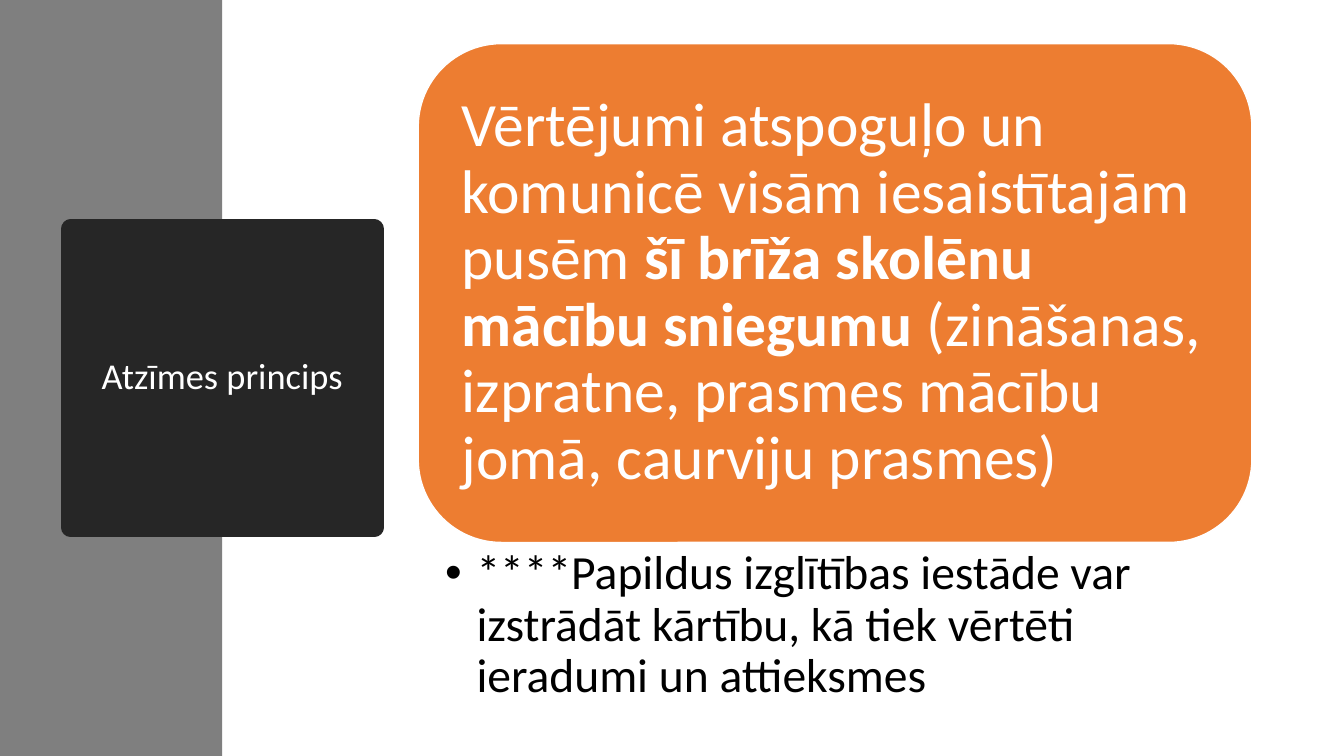
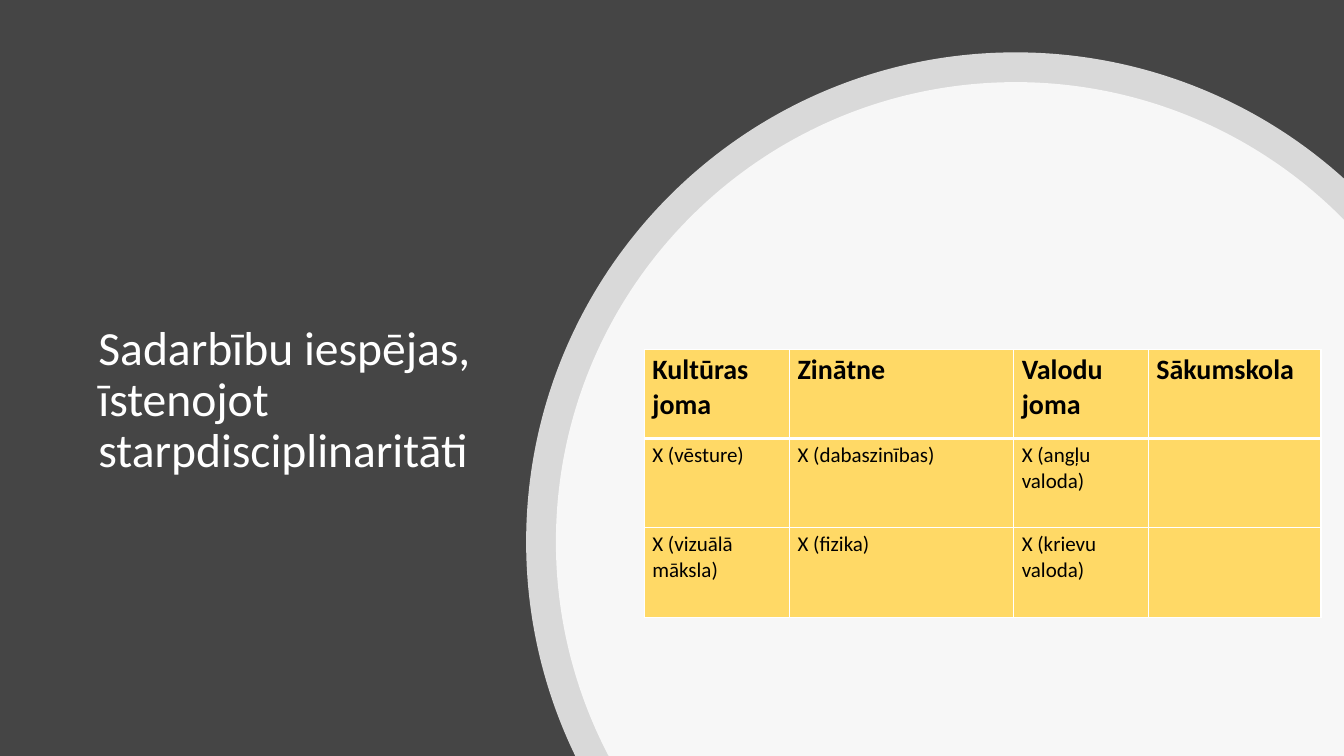
import math
from dataclasses import dataclass

import lxml.etree
import pptx
import pptx.util
import pptx.oxml.ns
import pptx.dml.color
import pptx.enum.shapes
import pptx.enum.text

Cm = pptx.util.Cm
Pt = pptx.util.Pt
Shape = pptx.enum.shapes.MSO_SHAPE
Align = pptx.enum.text.PP_ALIGN
Anchor = pptx.enum.text.MSO_ANCHOR
qn = pptx.oxml.ns.qn


@dataclass(frozen=True)
class Theme:
    font: str = "Calibri"
    white: str = "FFFFFF"
    black: str = "000000"
    band: str = "7F7F7F"
    label: str = "262626"
    card: str = "ED7D31"
    dark: str = "454545"
    cell: str = "FFD966"
    label_size: float = 26
    card_size: float = 44
    large_size: float = 34
    header_size: float = 20
    cell_size: float = 15
    tight: float = 0.9


THEME = Theme()
WIDTH, HEIGHT = 33.87, 19.05

PRINCIPLE = {
    "title": "Atzīmes princips",
    "card": [
        ("Vērtējumi atspoguļo un komunicē visām iesaistītajām pusēm ", False),
        ("šī brīža skolēnu mācību sniegumu ", True),
        ("(zināšanas, izpratne, prasmes mācību jomā, caurviju prasmes)", False),
    ],
    "note": "****Papildus izglītības iestāde var izstrādāt kārtību, "
            "kā tiek vērtēti ieradumi un attieksmes",
}
COOPERATION = {
    "title": "Sadarbību iespējas, īstenojot starpdisciplinaritāti",
    "rows": [
        ("Kultūras joma", "Zinātne", "Valodu joma", "Sākumskola"),
        ("X (vēsture)", "X (dabaszinības)", "X (angļu valoda)", ""),
        ("X (vizuālā māksla)", "X (fizika)", "X (krievu valoda)", ""),
    ],
    "columns": (3.66, 5.65, 3.39, 4.35),
    "row_height": 2.25,
    "centre": (25.6, 13.66),
    "radii": (12.34, 11.59),
}


def rgb(value):
    return pptx.dml.color.RGBColor.from_string(value)


def box_at(left, top, width, height):
    return [Cm(value) for value in (left, top, width, height)]


def paint(shape, fill, line=None, line_width=1):
    shape.fill.solid()
    shape.fill.fore_color.rgb = rgb(fill)
    if line:
        shape.line.color.rgb = rgb(line)
        shape.line.width = Pt(line_width)
    else:
        shape.line.fill.background()


def write(box, text, *, size, color=THEME.white, bold=False, align=Align.LEFT,
          anchor=Anchor.MIDDLE, insets=(0.25, 0.13, 0.25, 0.13),
          spacing=THEME.tight, bullet_indent=None):
    frame = box.text_frame
    holder = box
    if not hasattr(box, "margin_left"):
        holder = frame
        frame.word_wrap = True
        frame.auto_size = pptx.enum.text.MSO_AUTO_SIZE.NONE
    holder.vertical_anchor = anchor
    (holder.margin_left, holder.margin_top,
     holder.margin_right, holder.margin_bottom) = box_at(*insets)
    para = frame.paragraphs[0]
    para.alignment = align
    para.line_spacing = spacing
    for words, strong in [(text, bold)] if isinstance(text, str) else text:
        span = para.add_run()
        span.text = words
        span.font.name = THEME.font
        span.font.size = Pt(size)
        span.font.bold = strong
        span.font.color.rgb = rgb(color)
    if bullet_indent:
        props = para._p.get_or_add_pPr()
        props.set("marL", str(Cm(bullet_indent)))
        props.set("indent", str(-Cm(bullet_indent)))
        lxml.etree.SubElement(props, qn("a:buFont")).set("typeface", "Arial")
        lxml.etree.SubElement(props, qn("a:buChar")).set("char", "•")


def new_page(deck, background, title, place, **style):
    page = deck.slides.add_slide(deck.slide_layouts[5])
    page.background.fill.solid()
    page.background.fill.fore_color.rgb = rgb(background)
    heading = page.shapes.title
    heading.left, heading.top, heading.width, heading.height = box_at(*place)
    write(heading, title, **style)
    return page


def add_block(page, kind, place, fill, line=None):
    shape = page.shapes.add_shape(kind, *box_at(*place))
    shape.shadow.inherit = False
    paint(shape, fill, line)
    return shape


def add_disc(page, centre, radius):
    x, y = centre

    def on_circle(angle, pull=0):
        return (Cm(x + radius * (math.cos(angle) - pull * math.sin(angle))),
                Cm(y + radius * (math.sin(angle) + pull * math.cos(angle))))

    angles = [math.pi - math.asin((HEIGHT - y) / radius), math.pi, 1.5 * math.pi,
              2 * math.pi - math.acos((WIDTH - x) / radius)]
    points = [on_circle(angle) for angle in angles]
    builder = page.shapes.build_freeform(*points[0], scale=1.0)
    builder.add_line_segments(points[1:] + [(Cm(WIDTH), Cm(HEIGHT))], close=True)
    disc = builder.convert_to_shape()
    disc.shadow.inherit = False
    paint(disc, THEME.white)
    color = disc.element.spPr.find(qn("a:solidFill"))[0]
    lxml.etree.SubElement(color, qn("a:alpha")).set("val", "80000")

    lines = list(disc.element.iter(qn("a:lnTo")))
    for line, start, end in zip(lines, angles, angles[1:]):
        pull = 4 / 3 * math.tan((end - start) / 4)
        curve = lxml.etree.Element(qn("a:cubicBezTo"))
        for across, down in (on_circle(start, pull), on_circle(end, -pull), on_circle(end)):
            point = lxml.etree.SubElement(curve, qn("a:pt"))
            point.set("x", str(across - disc.left))
            point.set("y", str(down - disc.top))
        line.getparent().replace(line, curve)


def set_borders(cell, bottom_width):
    props = cell._tc.get_or_add_tcPr()
    widths = {"a:lnL": 1, "a:lnR": 1, "a:lnT": 1, "a:lnB": bottom_width}
    for position, (side, width) in enumerate(widths.items()):
        line = lxml.etree.Element(qn(side))
        line.set("w", str(Pt(width)))
        fill = lxml.etree.SubElement(line, qn("a:solidFill"))
        lxml.etree.SubElement(fill, qn("a:srgbClr")).set("val", THEME.white)
        props.insert(position, line)


def build_principle(deck):
    page = new_page(deck, THEME.white, PRINCIPLE["title"], (1.78, 5.77, 7.65, 7.52),
                    size=THEME.label_size, align=Align.CENTER)
    label = page.shapes.title
    paint(label, THEME.label, THEME.label, 13.75)
    lxml.etree.SubElement(label.element.spPr.find(qn("a:ln")), qn("a:round"))
    band = add_block(page, Shape.RECTANGLE, (0, 0, 5.6, HEIGHT), THEME.band)
    label.element.addprevious(band.element)

    card = add_block(page, Shape.ROUNDED_RECTANGLE, (10.54, 1.1, 21.01, 12.57),
                     THEME.card, THEME.white)
    write(card, PRINCIPLE["card"], size=THEME.card_size, insets=(0.48, 0.47, 0.46, 0.46))
    note = page.shapes.add_textbox(*box_at(10.55, 13.68, 21.01, 4.29))
    write(note, PRINCIPLE["note"], size=THEME.large_size, color=THEME.black,
          anchor=Anchor.TOP, insets=(0.67, 0.15, 0.86, 0.15), bullet_indent=0.79)


def build_cooperation(deck):
    page = new_page(deck, THEME.dark, COOPERATION["title"], (2.23, 3.88, 9.96, 12.45),
                    size=THEME.large_size)
    for radius in COOPERATION["radii"]:
        add_disc(page, COOPERATION["centre"], radius)

    rows, columns = COOPERATION["rows"], COOPERATION["columns"]
    row_height = COOPERATION["row_height"]
    place = box_at(16.24, 8.8, sum(columns), row_height * len(rows))
    table = page.shapes.add_table(len(rows), len(columns), *place).table
    table.horz_banding = False
    for column, width in zip(table.columns, columns):
        column.width = Cm(width)
    for row_index, texts in enumerate(rows):
        table.rows[row_index].height = Cm(row_height)
        header = row_index == 0
        for column_index, text in enumerate(texts):
            cell = table.cell(row_index, column_index)
            cell.fill.solid()
            cell.fill.fore_color.rgb = rgb(THEME.cell)
            set_borders(cell, 3 if header else 1)
            if text:
                write(cell, text, color=THEME.black, bold=header, spacing=1.0,
                      size=THEME.header_size if header else THEME.cell_size,
                      anchor=Anchor.TOP, insets=(0.2, 0.1, 0.2, 0.1))


def main():
    deck = pptx.Presentation()
    deck.slide_width, deck.slide_height = Cm(WIDTH), Cm(HEIGHT)
    build_principle(deck)
    build_cooperation(deck)
    deck.save("out.pptx")


if __name__ == "__main__":
    main()
